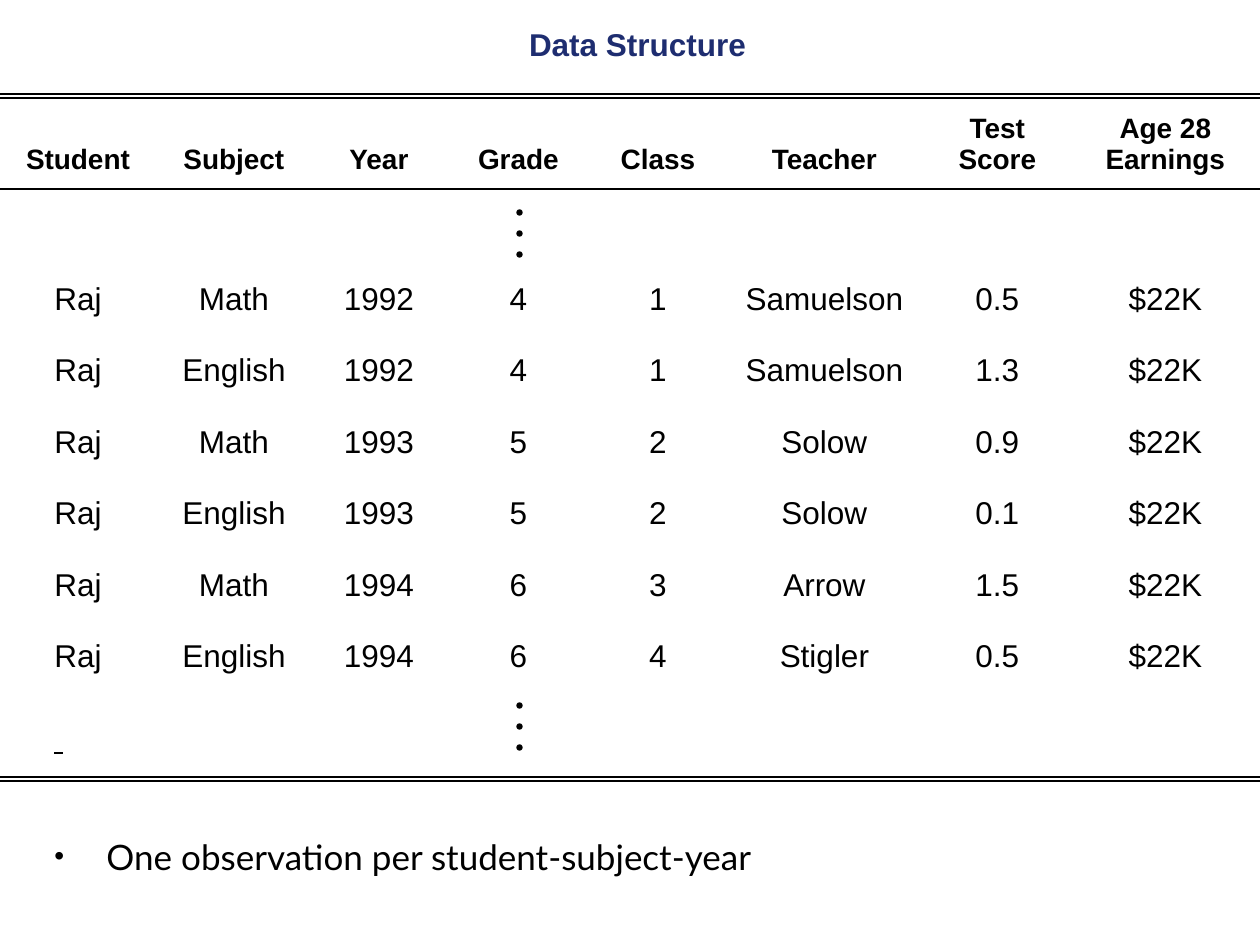
from dataclasses import dataclass

from lxml.etree import SubElement
from pptx import Presentation
from pptx.dml.color import RGBColor as RGB
from pptx.enum.shapes import MSO_CONNECTOR as CONN, MSO_SHAPE as SHAPE
from pptx.enum.text import MSO_ANCHOR as ANCHOR, MSO_AUTO_SIZE as FIT, PP_ALIGN as ALIGN
from pptx.oxml.ns import qn
from pptx.util import Emu, Pt

SCALE = 914400 / 126


@dataclass(frozen=True)
class Theme:
    black = RGB.from_string("000000")
    navy = RGB.from_string("1E2D70")
    table_font = "Arial"
    note_font = "Lato"
    title_size = 18
    header_size = 16
    body_size = 18
    note_size = 20
    bullet_pct = 80
    rule_width = 1
    dot_line = 0.75


T = Theme()
HEADERS = ["Student", "Subject", "Year", "Grade", "Class", "Teacher", "Test Score", "Age 28 Earnings"]
COLUMNS = [156, 156, 134, 145, 134, 199, 147, 189]
ROWS = [79, 71, 71, 71, 72, 71, 72, 71]
RECORDS = [
    ("Math", "1992", "4", "1", "Samuelson", "0.5"),
    ("English", "1992", "4", "1", "Samuelson", "1.3"),
    ("Math", "1993", "5", "2", "Solow", "0.9"),
    ("English", "1993", "5", "2", "Solow", "0.1"),
    ("Math", "1994", "6", "3", "Arrow", "1.5"),
    ("English", "1994", "6", "4", "Stigler", "0.5"),
]


def px(n):
    return Emu(round(n * SCALE))


def box(*lengths):
    return [px(n) for n in lengths]


def set_all(obj, values):
    for name, value in values.items():
        setattr(obj, name, value)


def add_run(p, text, size, font, color=T.black, **more):
    r = p.add_run()
    r.text = text
    set_all(r.font, {"size": Pt(size), "name": font, **more})
    r.font.color.rgb = color


def add_title(s):
    tf = s.shapes.add_textbox(*box(528, 25, 219, 38)).text_frame
    set_all(tf, {"margin_left": 0, "margin_top": 0, "margin_right": 0, "margin_bottom": 0,
                 "word_wrap": False, "auto_size": FIT.SHAPE_TO_FIT_TEXT})
    p = tf.paragraphs[0]
    p.alignment = ALIGN.CENTER
    add_run(p, "Data Structure", T.title_size, T.table_font, T.navy, bold=True)


def add_data_table(s):
    rows = [HEADERS, [""] * len(HEADERS)] + [("Raj", *rec, "$22K") for rec in RECORDS]
    table = s.shapes.add_table(len(ROWS), len(COLUMNS), *box(0, 103, sum(COLUMNS), sum(ROWS))).table
    set_all(table, {"first_row": False, "horz_banding": False})
    for column, width in zip(table.columns, COLUMNS):
        column.width = px(width)
    for i, (row, height, texts) in enumerate(zip(table.rows, ROWS, rows)):
        row.height = px(height)
        size = T.body_size if i else T.header_size
        for cell, text in zip(row.cells, texts):
            cell.fill.background()
            cell.vertical_anchor = ANCHOR.BOTTOM
            if text:
                p = cell.text_frame.paragraphs[0]
                p.alignment = ALIGN.CENTER
                add_run(p, text, size, T.table_font, bold=i == 0)


def add_dots(s, top):
    for i in range(3):
        sp = s.shapes.add_shape(SHAPE.OVAL, *box(517, top + 21 * i, 5, 5))
        sp.shadow.inherit = False
        sp.fill.solid()
        sp.fill.fore_color.rgb = T.black
        sp.line.color.rgb = T.black
        sp.line.width = Pt(T.dot_line)


def add_rule(shapes, y):
    line = shapes.add_connector(CONN.STRAIGHT, *box(0, y, 1260, y))
    line.line.color.rgb = T.black
    line.line.width = Pt(T.rule_width)
    SubElement(line._element.spPr, qn("a:effectLst"))


def add_double_rule(s, y):
    group = s.shapes.add_group_shape()
    for offset in (0, 4):
        add_rule(group.shapes, y + offset)


def add_note(s):
    tf = s.shapes.add_textbox(*box(10, 703, 1176, 183)).text_frame
    set_all(tf, {"word_wrap": True, "auto_size": FIT.SHAPE_TO_FIT_TEXT})
    lead, note = tf.paragraphs[0], tf.add_paragraph()
    for p in (lead, note):
        pPr = p._p.get_or_add_pPr()
        pPr.set("marL", str(px(84)))
        pPr.set("indent", str(px(-52)))
    add_run(lead, " ", T.note_size, T.note_font, underline=True)
    note.space_before = Pt(48)
    SubElement(pPr, qn("a:buSzPct")).set("val", str(T.bullet_pct * 1000))
    SubElement(pPr, qn("a:buFont")).set("typeface", T.table_font)
    SubElement(pPr, qn("a:buChar")).set("char", "•")
    add_run(note, "One observation per student-subject-year", T.note_size, T.note_font)


def main():
    prs = Presentation()
    set_all(prs, {"slide_width": px(1260), "slide_height": px(945)})
    s = prs.slides.add_slide(prs.slide_layouts[6])
    add_data_table(s)
    add_title(s)
    for top in (210, 703):
        add_dots(s, top)
    add_double_rule(s, 94)
    add_rule(s.shapes, 189)
    add_double_rule(s, 777)
    add_note(s)
    prs.save("out.pptx")


if __name__ == "__main__":
    main()
